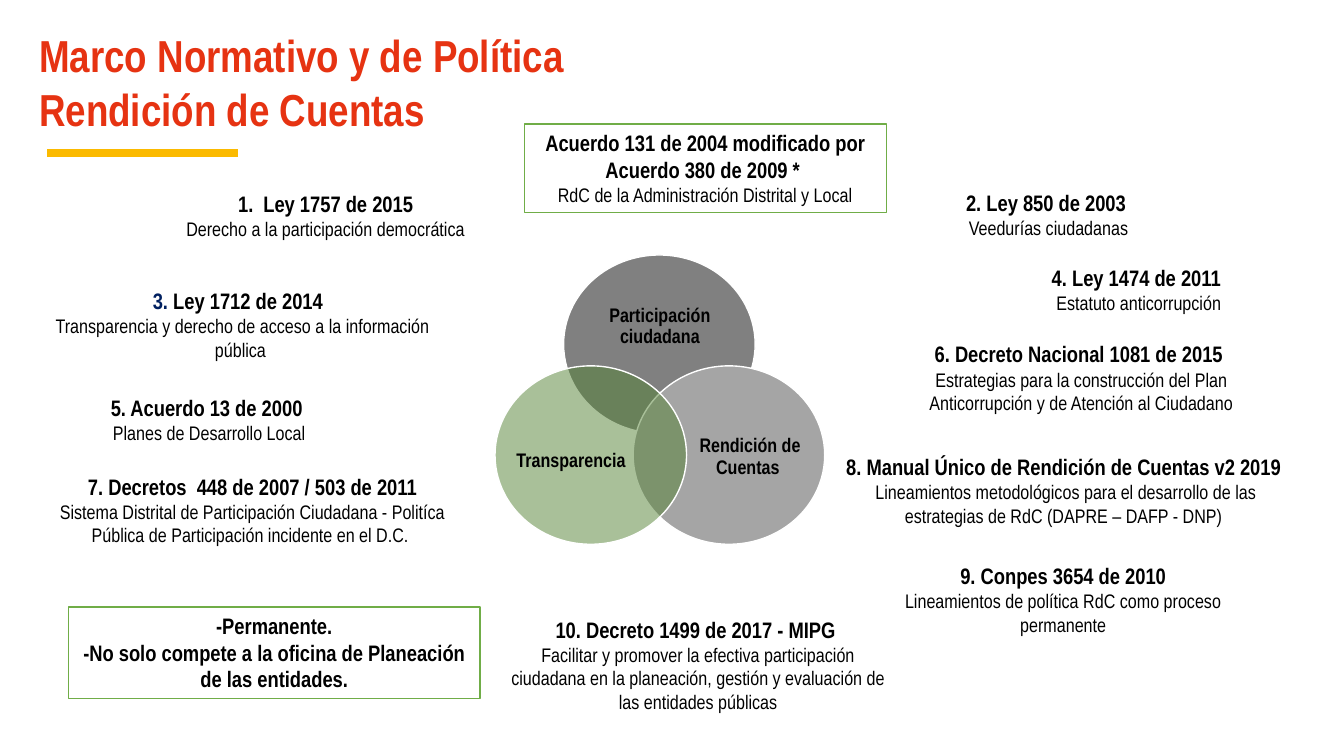
from lxml import etree
from pptx import Presentation
from pptx.dml.color import RGBColor
from pptx.enum.shapes import MSO_CONNECTOR, MSO_SHAPE
from pptx.enum.text import MSO_ANCHOR, MSO_AUTO_SIZE, PP_ALIGN
from pptx.oxml.ns import qn
from pptx.util import Inches, Pt

CENTER, LEFT = PP_ALIGN.CENTER, PP_ALIGN.LEFT
TOP, MIDDLE = MSO_ANCHOR.TOP, MSO_ANCHOR.MIDDLE
GROW = MSO_AUTO_SIZE.SHAPE_TO_FIT_TEXT
RECTANGLE, OVAL = MSO_SHAPE.RECTANGLE, MSO_SHAPE.OVAL
STRAIGHT = MSO_CONNECTOR.STRAIGHT

THEME = {
    "font": "Arial Narrow",
    "title_size": 32, "head_size": 16, "body_size": 14,
    "title": "E63312", "ink": "000000", "navy": "002060",
    "paper": "FFFFFF", "frame": "70AD47", "accent": "FBBA00",
    "dark": "808080", "gray": "A5A5A5", "green": "548235",
}

TITLE = ["Marco Normativo y de Política", "Rendición de Cuentas"]
TITLE_AREA = (0.29, 0.23, 11.13, 1.18)
UNDERLINE = (0.47, 1.52, 2.36, 1.52)

NORMS = [
    ((1.16, 1.84, 4.14, 0.61), "", "Ley 1757 de 2015",
     "Derecho a la participación democrática"),
    ((8.67, 1.83, 3.46, 0.61), "2. ", "Ley 850 de 2003 ", "Veedurías ciudadanas"),
    ((0.37, 2.8, 4.03, 0.85), "3. ", "Ley 1712 de 2014 ",
     " Transparencia y derecho de acceso a la información pública"),
    ((9.74, 2.57, 3.11, 0.61), "4. ", "Ley 1474 de 2011 ", "Estatuto anticorrupción"),
    ((0.55, 3.86, 3.05, 0.61), "5. ", "Acuerdo 13 de 2000 ", "Planes de Desarrollo Local"),
    ((8.67, 3.33, 4.11, 0.85), "6. ", "Decreto Nacional 1081 de 2015 ",
     "Estrategias para la construcción del Plan Anticorrupción y de Atención al Ciudadano"),
    ((0.37, 4.64, 4.27, 0.85), "7. ", "Decretos  448 de 2007 / 503 de 2011",
     "Sistema Distrital de Participación Ciudadana - Politíca Pública de "
     "Participación incidente en el D.C. "),
    ((8.21, 4.45, 4.68, 0.85), "8. ", "Manual Único de Rendición de Cuentas v2 2019",
     " Lineamientos metodológicos para el desarrollo de las estrategias de RdC "
     "(DAPRE – DAFP - DNP)"),
    ((8.7, 5.53, 3.69, 0.85), "9. ", "Conpes 3654 de 2010",
     "Lineamientos de política RdC como proceso permanente"),
    ((4.91, 6.06, 4.03, 1.08), "10. ", "Decreto 1499 de 2017 - MIPG ",
     "Facilitar y promover la efectiva participación ciudadana en la planeación, "
     "gestión y evaluación de las entidades públicas"),
]
NAVY_NUMBER = "3. "

AGREEMENT = ((5.2, 1.23, 3.59, 0.88), "Acuerdo 131 de 2004 modificado por Acuerdo 380 de 2009 * ",
             "RdC de la Administración Distrital y Local")
REMINDER = ((0.68, 6.02, 4.08, 0.91), "-Permanente.",
            "-No solo compete a la oficina de Planeación de las entidades.")

CIRCLE_SIZE = (1.9, 1.77)
CIRCLES = [
    ((5.59, 2.53), "dark", 100, (5.85, 2.84, 1.39, 0.8), "Participación ciudadana"),
    ((6.28, 3.63), "gray", 100, (6.87, 4.05, 1.14, 0.97), "Rendición de Cuentas "),
    ((4.91, 3.63), "green", 50, (5.08, 4.09, 1.17, 0.97), "Transparencia"),
]


def color(name):
    return RGBColor.from_string(THEME[name])


def inches(values):
    return [Inches(value) for value in values]


def style(font, size, bold, ink="ink"):
    font.name, font.size, font.bold = THEME["font"], Pt(THEME[size]), bold
    font.color.rgb = color(ink)


def write(box, lines, align=CENTER, anchor=TOP, ink="ink"):
    frame = box.text_frame
    frame.word_wrap = True
    frame.vertical_anchor = anchor
    frame.text = "\n".join(text for text, size, bold in lines)
    for para, (text, size, bold) in zip(frame.paragraphs, lines):
        para.alignment = align
        for span in para.runs:
            style(span.font, size, bold, ink)
    return frame


def add_text(page, area, lines, **options):
    box = page.shapes.add_textbox(*inches(area))
    frame = write(box, lines, **options)
    frame.auto_size = GROW
    return frame


def add_outlined(page, kind, area, fill, line):
    shape = page.shapes.add_shape(kind, *inches(area))
    shape.shadow.inherit = False
    shape.fill.solid()
    shape.fill.fore_color.rgb = color(fill)
    shape.line.color.rgb = color(line)
    shape.line.width = Pt(1)
    return shape


def add_framed(page, area, lines):
    shape = add_outlined(page, RECTANGLE, area, "paper", "frame")
    write(shape, lines).auto_size = GROW


def add_norm(page, area, number, name, topic):
    frame = add_text(page, area, [(number + name, "head_size", True), (topic, "body_size", False)])
    heading = frame.paragraphs[0]
    if number == NAVY_NUMBER:
        heading.text = number
        heading.add_run().text = name
        for span, ink in zip(heading.runs, ("navy", "ink")):
            style(span.font, "head_size", True, ink)
    if not number:
        for para in frame.paragraphs:
            properties = para._p.get_or_add_pPr()
            properties.set("marL", str(Inches(0.25)))
            properties.set("indent", str(-Inches(0.25)))
        etree.SubElement(heading._p.pPr, qn("a:buFont"), typeface="+mj-lt")
        etree.SubElement(heading._p.pPr, qn("a:buAutoNum"), type="arabicPeriod")


def add_circle(page, corner, fill, opacity, label_area, label):
    circle = add_outlined(page, OVAL, corner + CIRCLE_SIZE, fill, "paper")
    if opacity < 100:
        tint = circle.fill._xPr.find(qn("a:solidFill"))[0]
        etree.SubElement(tint, qn("a:alpha"), val=str(opacity * 1000))
    box = page.shapes.add_textbox(*inches(label_area))
    frame = write(box, [(label, "body_size", True)], anchor=MIDDLE)
    frame.margin_left = frame.margin_right = frame.margin_top = frame.margin_bottom = 0
    frame.paragraphs[0].line_spacing = 0.9


def main():
    deck = Presentation()
    deck.slide_width, deck.slide_height = Inches(13.33), Inches(7.5)
    page = deck.slides.add_slide(deck.slide_layouts[6])

    for norm in NORMS:
        add_norm(page, *norm)
    for circle in CIRCLES:
        add_circle(page, *circle)

    for (area, first, second), size, bold in (
        (AGREEMENT, "body_size", False), (REMINDER, "head_size", True),
    ):
        add_framed(page, area, [(first, "head_size", True), (second, size, bold)])

    underline = page.shapes.add_connector(STRAIGHT, *inches(UNDERLINE))
    underline.line.color.rgb = color("accent")
    underline.line.width = Pt(6)
    etree.SubElement(underline._element.spPr, qn("a:effectLst"))

    add_text(page, TITLE_AREA, [(text, "title_size", True) for text in TITLE],
             align=LEFT, ink="title")
    deck.save("out.pptx")


if __name__ == "__main__":
    main()
